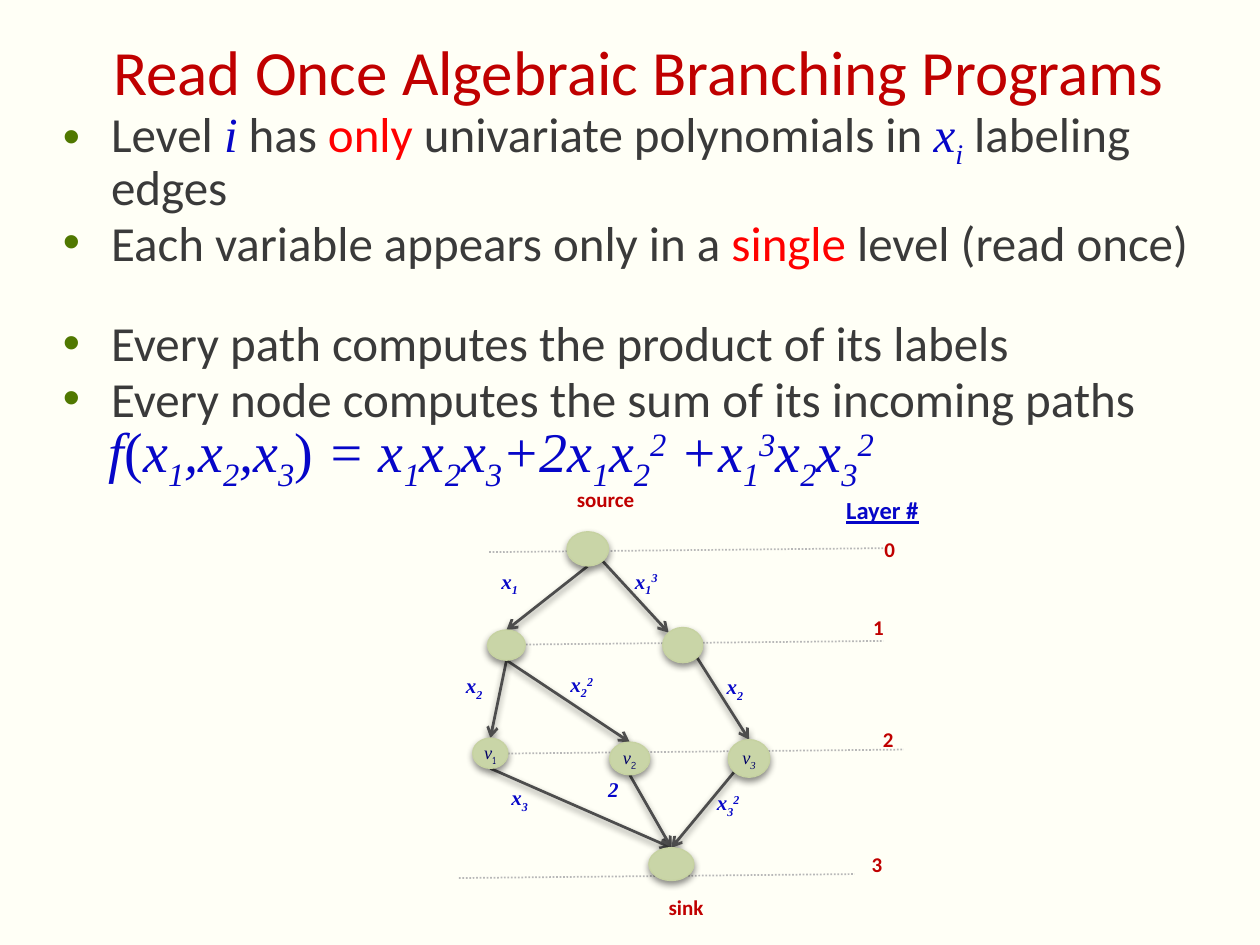
from math import cos, radians, sin

from lxml.etree import SubElement as Sub
from pptx import Presentation
from pptx.dml.color import RGBColor as RGB
from pptx.enum.dml import MSO_LINE as Dash
from pptx.enum.shapes import MSO_CONNECTOR as Link, MSO_SHAPE as Kind
from pptx.enum.text import MSO_ANCHOR as Anchor, MSO_AUTO_SIZE as Auto, PP_ALIGN as Align
from pptx.oxml.ns import qn
from pptx.util import Cm, Pt

CREAM = RGB(0xFF, 0xFF, 0xF6)
DARK = RGB(0x3A, 0x3A, 0x3A)
RED = RGB(0xFF, 0, 0)
BRICK = RGB(0xC0, 0, 0)
BLUE = RGB(0x06, 0x06, 0xC8)
NAVY = RGB(0, 0, 0x66)
LEAF = RGB(0xC9, 0xD5, 0xA7)
RIM = RGB(0xC6, 0xD2, 0xA1)
EDGE = RGB(0x4D, 0x4D, 0x4D)
DOTS = RGB(0xB8, 0xB8, 0xB8)
SERIF = "Times New Roman"

TITLE = dict(name="Calibri", size=Pt(36), rgb=BRICK)
BODY = dict(name="Calibri", size=Pt(28), rgb=DARK)
HOT = BODY | dict(rgb=RED)
MATH = dict(name=SERIF, size=Pt(28), rgb=BLUE, italic=True)
SUM = MATH | dict(size=Pt(32))
MARK = MATH | dict(size=Pt(12), bold=True)
NAME = dict(name="Calibri", size=Pt(12), rgb=BRICK, bold=True)
HEAD = NAME | dict(size=Pt(14), rgb=BLUE, underline=True)
NODE = dict(name=SERIF, size=Pt(10.5), rgb=NAVY, italic=True)
COMIC = dict(name="Comic Neue", italic=False)


class Deck:
    def __init__(self):
        self.prs = Presentation()
        self.prs.slide_width, self.prs.slide_height = Cm(25.4), Cm(19.05)
        self.slide = self.prs.slides.add_slide(self.prs.slide_layouts[6])
        back = self.slide.background.fill
        back.solid()
        back.fore_color.rgb = CREAM
        self.shapes = self.slide.shapes

    def run(self, para, text, fmt, base=0):
        run = para.add_run()
        run.text = text
        for key, val in fmt.items():
            setattr(run.font.color if key == "rgb" else run.font, key, val)
        if base:
            run._r.get_or_add_rPr().set("baseline", str(base * 1000))

    def math(self, para, text, fmt, low=None):
        """Write text where _ lowers and ^ raises the next letter; brackets stand upright."""
        parts, base = [], 0
        for char in text:
            if char in "_^":
                base = -25 if char == "_" else 30
                continue
            kind = (base, char in "()")
            if parts and parts[-1][0] == kind:
                parts[-1][1] += char
            else:
                parts.append([kind, char])
            base = 0
        for (base, flat), chars in parts:
            look = fmt | ({"italic": False} if flat else {})
            self.run(para, chars, look | (low or {}) if base < 0 else look, base)

    def box(self, x, y, w, h, wrap=True):
        frame = self.shapes.add_textbox(Cm(x), Cm(y), Cm(w), Cm(h)).text_frame
        frame.word_wrap = wrap
        return frame

    def label(self, text, x, y, w, h, fmt, wrap=True, align=Align.LEFT):
        frame = self.box(x, y, w, h, wrap)
        frame.auto_size = Auto.SHAPE_TO_FIT_TEXT
        frame.paragraphs[0].alignment = align
        self.math(frame.paragraphs[0], text, fmt)

    def bullet(self, para, parts, gap):
        props = para._p.get_or_add_pPr()
        props.set("marL", str(Cm(0.97)))
        props.set("indent", str(Cm(-0.97)))
        Sub(Sub(props, qn("a:buClr")), qn("a:srgbClr"), val="507800")
        Sub(props, qn("a:buFont"), typeface="Arial")
        Sub(props, qn("a:buChar"), char="•")
        para.line_spacing, para.space_before = Pt(26), Pt(gap)
        for text, fmt in parts:
            self.math(para, text, fmt) if fmt is MATH else self.run(para, text, fmt)

    def shade(self, shape, on=True):
        props = shape._element.spPr
        fx = props.find(qn("a:effectLst"))
        if fx is None:
            fx = Sub(props, qn("a:effectLst"))
        if on:
            drop = Sub(fx, qn("a:outerShdw"), blurRad=str(Pt(4)), dist=str(Pt(2)),
                       dir="5400000", rotWithShape="0")
            Sub(Sub(drop, qn("a:srgbClr"), val="000000"), qn("a:alpha"), val="45000")

    def line(self, start, end, color, width):
        line = self.shapes.add_connector(Link.STRAIGHT, *map(Cm, start + end))
        line.line.color.rgb, line.line.width = color, Pt(width)
        return line

    def dots(self, x, y):
        line = self.line((x, y), (x + 7.98, y - 0.08), DOTS, 1)
        line.line.dash_style = Dash.ROUND_DOT
        self.shade(line, False)

    def arrow(self, start, end):
        line = self.line(start, end, EDGE, 1.57)
        Sub(line.line._get_or_add_ln(), qn("a:tailEnd"), type="arrow")
        self.shade(line)

    def node(self, x, y, w, h, text):
        oval = self.shapes.add_shape(Kind.OVAL, Cm(x), Cm(y), Cm(w), Cm(h))
        oval.shadow.inherit = False
        oval.fill.solid()
        oval.fill.fore_color.rgb = LEAF
        oval.line.color.rgb, oval.line.width = RIM, Pt(0.75)
        self.shade(oval)
        if text:
            frame = oval.text_frame
            frame.word_wrap, frame.vertical_anchor = False, Anchor.MIDDLE
            for side in ("left", "right", "top", "bottom"):
                setattr(frame, "margin_" + side, 0)
            para = frame.paragraphs[0]
            para.alignment, para.line_spacing = Align.CENTER, 0.95
            self.math(para, text, NODE, None if text == "v_3" else COMIC)


def rim(oval, deg):
    """Point on the oval's outline, clockwise from the right."""
    x, y, w, h = oval[:4]
    turn = radians(deg)
    return x + w / 2 * (1 + cos(turn)), y + h / 2 * (1 + sin(turn))


def main():
    deck = Deck()

    # Title
    frame = deck.box(0.74, 0.41, 24.28, 2.03)
    frame.vertical_anchor = Anchor.MIDDLE
    frame.paragraphs[0].alignment = Align.CENTER
    deck.run(frame.paragraphs[0], "Read Once Algebraic Branching Programs", TITLE)

    # Bullets, each with the space before it
    items = [
        (0, [("Level ", BODY), ("i", MATH), (" has ", BODY), ("only", HOT),
             (" univariate polynomials in ", BODY), ("x_i", MATH),
             (" labeling edges", BODY)]),
        (5.6, [("Each variable appears only in a ", BODY), ("single", HOT),
               (" level (read once)", BODY)]),
        (31.6, [("Every path computes the product of its labels", BODY)]),
        (5.6, [("Every node computes the sum of its incoming paths", BODY)]),
    ]
    frame = deck.box(1.02, 2.39, 23.34, 11.99)
    for num, (gap, parts) in enumerate(items):
        para = frame.add_paragraph() if num else frame.paragraphs[0]
        deck.bullet(para, parts, gap)

    # Formula
    deck.label("f(x_1,x_2,x_3) = x_1x_2x_3+2x_1x_2^2 +x_1^3x_2x_3^2",
               1.47, 8.28, 16.87, 1.63, SUM, False, Align.CENTER)

    # Layer lines and numbers
    deck.label("Layer #", 16.81, 9.86, 2.77, 0.97, HEAD)
    layers = [(9.86, 11.13, 17.58, 10.69), (9.83, 13, 17.35, 12.27),
              (10.24, 15.19, 17.55, 14.53), (9.25, 17.7, 17.32, 17.04)]
    for num, (x, y, left, top) in enumerate(layers):
        deck.dots(x, y)
        deck.label(str(num), left, top, 0.94, 0.76, NAME)

    # Graph: edges first, nodes above them
    nodes = dict(
        top=(11.43, 10.72, 0.84, 0.69, ""),
        left=(9.83, 12.7, 0.76, 0.61, ""),
        right=(13.36, 12.65, 0.81, 0.71, ""),
        v1=(9.53, 14.88, 0.71, 0.61, "v_1"),
        v2=(12.29, 14.96, 0.81, 0.66, "v_2"),
        v3=(14.68, 14.91, 0.84, 0.76, "v_3"),
        sink=(13.08, 17.09, 0.91, 0.66, ""),
    )
    edges = [  # from, angle, to, angle, label, label place
        ("top", 90, "left", 270, "x_1", 9.86, 11.33),
        ("top", 45, "right", 225, "x_1^3", 12.55, 11.33),
        ("left", 90, "v1", 270, "x_2", 9.14, 13.44),
        ("left", 90, "v2", 270, "x_2^2", 11.25, 13.41),
        ("right", 45, "v3", 270, "x_2", 14.4, 13.46),
        ("v1", 90, "sink", 270, "x_3", 10.06, 15.7),
        ("v2", 90, "sink", 270, "2", 12.01, 15.52),
        ("v3", 135, "sink", 270, "x_3^2", 14.2, 15.8),
    ]
    for start, out, end, into, text, x, y in edges:
        deck.arrow(rim(nodes[start], out), rim(nodes[end], into))
        deck.label(text, x, y, 1.45, 0.86, MARK)
    for oval in nodes.values():
        deck.node(*oval)
    for text, x, y in [("source", 11.38, 9.68), ("sink", 13.23, 17.91)]:
        deck.label(text, x, y, 2.77, 0.86, NAME)

    deck.prs.save("out.pptx")


if __name__ == "__main__":
    main()
